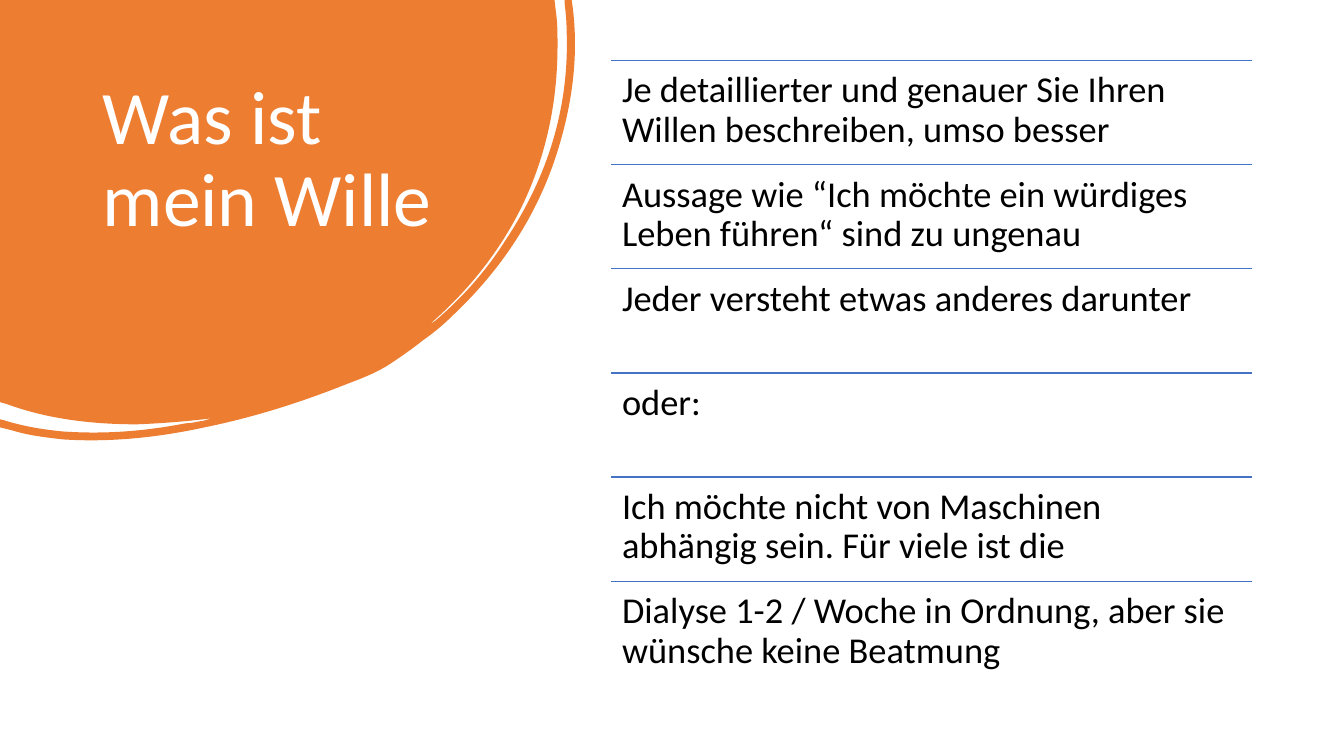
from lxml.etree import SubElement
from pptx import Presentation
from pptx.dml.color import RGBColor
from pptx.enum.shapes import MSO_CONNECTOR as Connector
from pptx.enum.text import MSO_ANCHOR as Anchor
from pptx.oxml.ns import qn
from pptx.util import Pt

# Content
TITLE = "Was ist mein Wille"
STATEMENTS = [
    "Je detaillierter und genauer Sie Ihren Willen beschreiben, umso besser",
    "Aussage wie “Ich möchte ein würdiges Leben führen“ sind zu ungenau",
    "Jeder versteht etwas anderes darunter",
    "oder:",
    "Ich möchte nicht von Maschinen abhängig sein. Für viele ist die",
    "Dialyse 1-2 / Woche in Ordnung, aber sie wünsche keine Beatmung",
]

# Lengths in px, 100 to the inch
PX = 9144
PAGE_SIZE = (1333, 750)
TITLE_BOX = (92, 74, 352, 222)
LIST_BOX = (606, 60, 636, 620)
BLOB_SIZE = (571, 437)
ORANGE, BLUE, WHITE, BLACK = "ED7D31", "4472C4", "FFFFFF", "000000"
TITLE_FONT = {"size": Pt(54), "name": "Calibri"}
LIST_FONT = {"size": Pt(26), "name": "Calibri"}
TITLE_PARA = {"line_spacing": 0.9}
LIST_PARA = {"line_spacing": 0.9, "space_after": Pt(9)}

# Blob outline from the top left corner: two numbers make a line, six a curve
BLOB = [
    (550, 0), (552, 17),
    (553, 26, 553, 36, 553, 45), (553, 101, 542, 154, 518, 204),
    (496, 249, 465, 288, 427, 321), (429, 321, 430, 319, 432, 318),
    (459, 295, 482, 269, 501, 239), (543, 176, 565, 107, 562, 30),
    (562, 21, 561, 12, 560, 3),
    (560, 0), (567, 0), (568, 7),
    (574, 54, 568, 102, 553, 150), (533, 214, 497, 268, 448, 314),
    (439, 323, 429, 331, 419, 338), (409, 346, 399, 353, 387, 361),
    (375, 369, 360, 375, 344, 381), (299, 399, 252, 414, 203, 424),
    (157, 434, 110, 439, 63, 436), (45, 434, 28, 432, 12, 427),
    (0, 424), (0, 416), (4, 417),
    (23, 423, 42, 426, 61, 428), (103, 431, 143, 428, 184, 420),
    (189, 420, 193, 419, 198, 418), (202, 418, 206, 416, 210, 415),
    (186, 418, 161, 420, 136, 421), (92, 421, 48, 416, 7, 401),
    (0, 399),
]


def color(value):
    return RGBColor.from_string(value)


def emu(*lengths):
    return [round(length * PX) for length in lengths]


def set_all(target, values):
    for key, value in values.items():
        setattr(target, key, value)


def add_blob(shapes):
    builder = shapes.build_freeform(0, 0)
    builder.add_line_segments([emu(*segment[-2:]) for segment in BLOB], close=True)
    blob = builder.convert_to_shape()
    blob.shadow.inherit = False
    blob.fill.solid()
    blob.fill.fore_color.rgb = color(ORANGE)
    blob.line.fill.background()

    # Frame and coordinate space, widened to hold the bulging curves
    blob.width, blob.height = emu(*BLOB_SIZE)
    route = next(blob.element.iter(qn("a:path")))
    for key, length in zip("wh", emu(*BLOB_SIZE)):
        route.set(key, str(length))

    # Straight segments become Bézier curves where control points are given
    for line, segment in zip(route.findall(qn("a:lnTo")), BLOB):
        if len(segment) == 6:
            line.tag = qn("a:cubicBezTo")
            for child in list(line):
                line.remove(child)
            numbers = emu(*segment)
            for x, y in zip(numbers[::2], numbers[1::2]):
                SubElement(line, qn("a:pt"), x=str(x), y=str(y))


def add_text(shapes, place, text, text_color, font_format, para_format, inset):
    box = shapes.add_textbox(*emu(*place))
    frame = box.text_frame
    set_all(frame, {"word_wrap": True, "vertical_anchor": Anchor.TOP})
    sides = ("margin_left", "margin_top", "margin_right", "margin_bottom")
    set_all(frame, dict(zip(sides, emu(*inset))))
    para = frame.paragraphs[0]
    set_all(para, para_format)
    span = para.add_run()
    span.text = text
    set_all(span.font, font_format)
    span.font.color.rgb = color(text_color)


def add_rule(shapes, left, top, width):
    rule = shapes.add_connector(Connector.STRAIGHT, *emu(left, top, left + width, top))
    set_all(rule.line, {"width": Pt(1)})
    rule.line.color.rgb = color(BLUE)
    SubElement(rule.element.spPr, qn("a:effectLst"))


def main():
    deck = Presentation()
    deck.slide_width, deck.slide_height = emu(*PAGE_SIZE)
    page = deck.slides.add_slide(deck.slide_layouts[6])

    # Orange blob with its title
    add_blob(page.shapes)
    add_text(page.shapes, TITLE_BOX, TITLE, WHITE, TITLE_FONT, TITLE_PARA, (10, 5, 10, 5))

    # Ruled list of statements in equal rows
    rows = page.shapes.add_group_shape().shapes
    left, top, width, height = LIST_BOX
    row_height = height / len(STATEMENTS)
    for index, statement in enumerate(STATEMENTS):
        row_top = top + index * row_height
        add_rule(rows, left, row_top, width)
        add_text(rows, (left, row_top, width, row_height), statement,
                 BLACK, LIST_FONT, LIST_PARA, (11, 11, 11, 11))

    deck.save("out.pptx")


if __name__ == "__main__":
    main()
